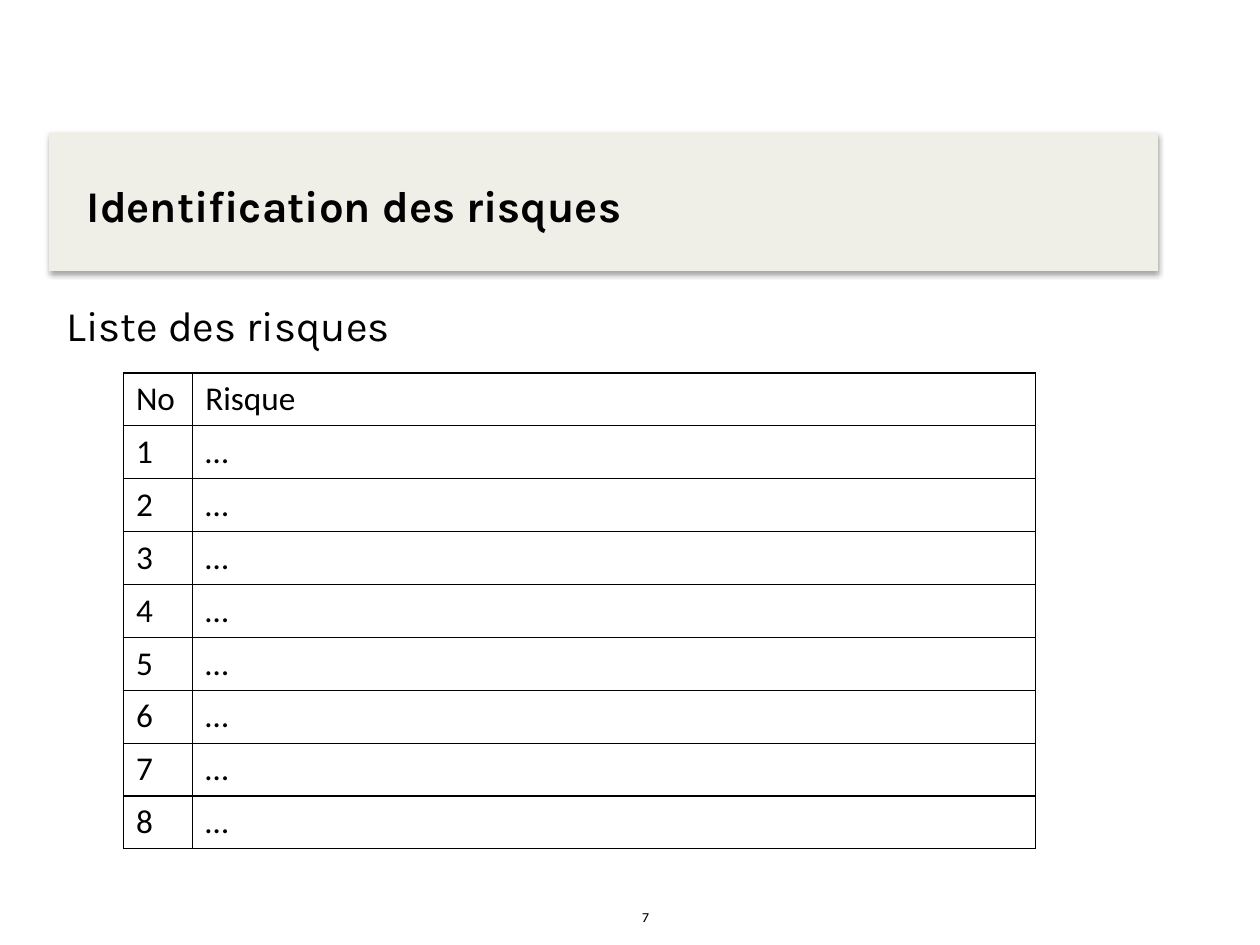
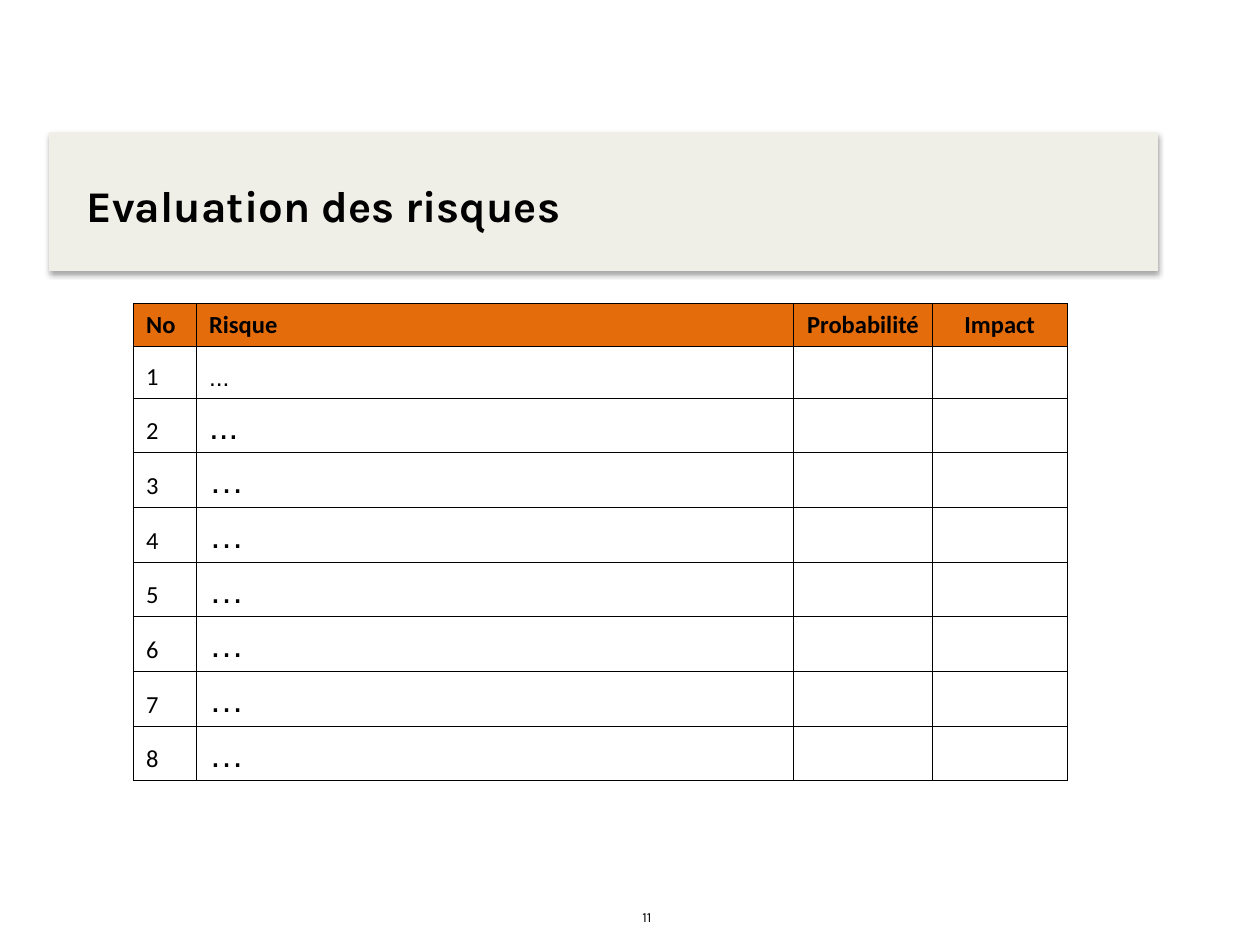
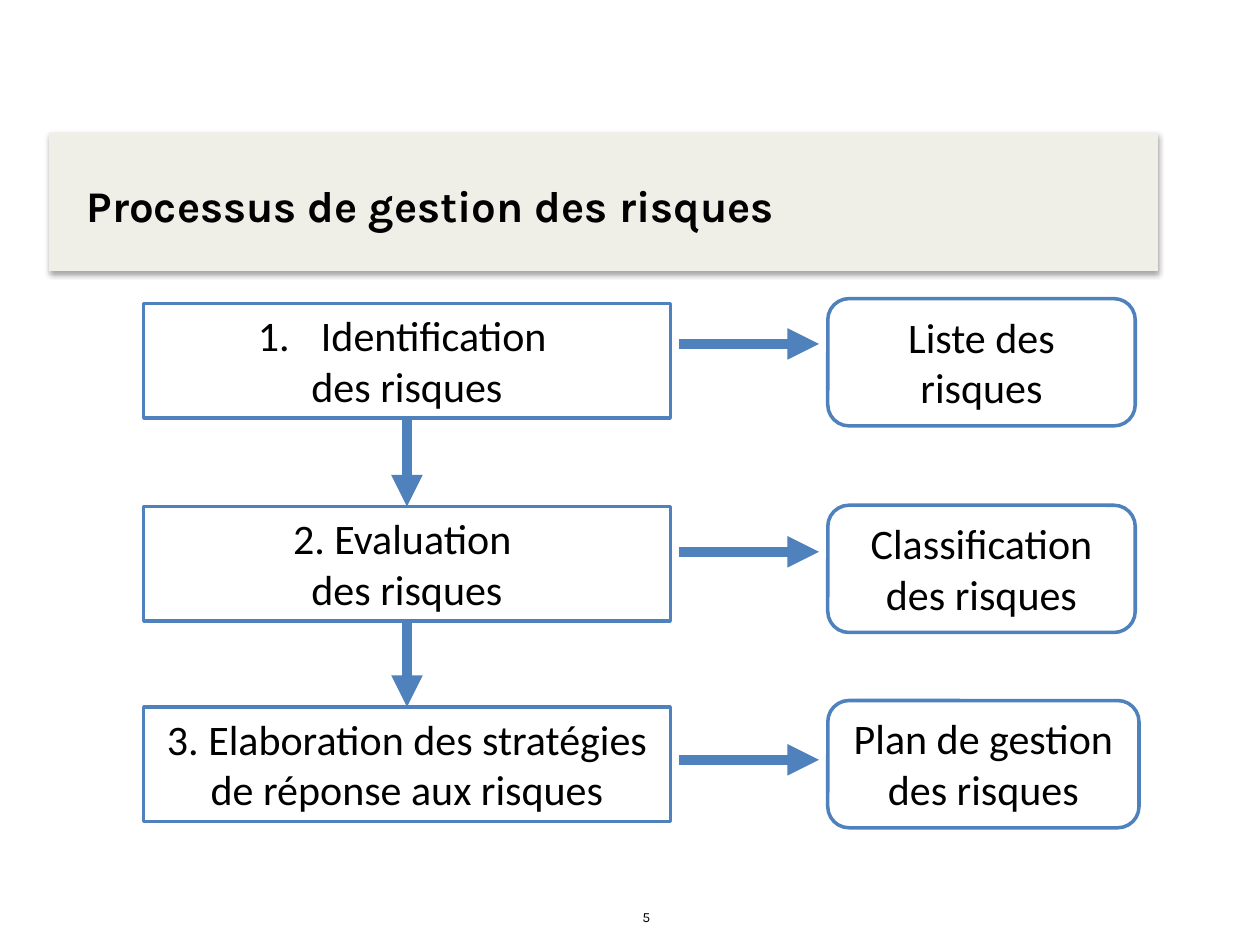
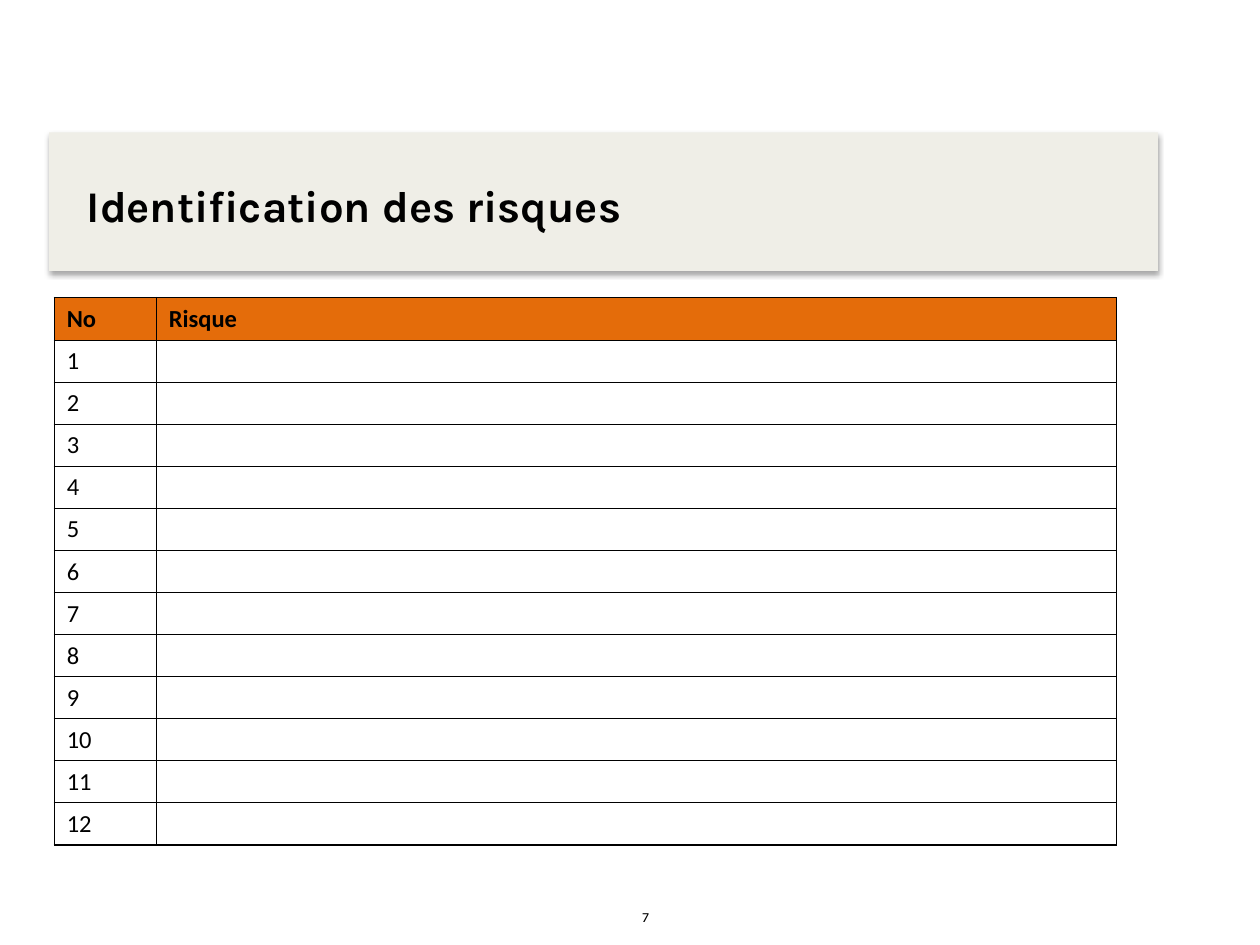
"""Build four slides on risk management: two blank risk lists, a risk rating grid and the process."""
from lxml import etree
from pptx import Presentation, util as u
from pptx.dml.color import RGBColor
from pptx.enum import shapes, text
from pptx.oxml.ns import qn

PX = u.Inches(1) // 100
BLACK = RGBColor(0x00, 0x00, 0x00)
WHITE = RGBColor(0xFF, 0xFF, 0xFF)
BAND = RGBColor(0xEF, 0xEE, 0xE7)
ORANGE = RGBColor(0xE4, 0x6C, 0x0A)
BLUE = RGBColor(0x4F, 0x81, 0xBD)
TOP, BOTTOM = 0, 2


def write(p, words, size, face="Calibri", bold=False, align=text.PP_ALIGN.LEFT):
    """Fill a paragraph and set its look."""
    p.text = words
    p.alignment = align
    p.font.size = u.Pt(size)
    p.font.name = face
    p.font.bold = bold
    p.font.color.rgb = BLACK


def add(parent, tag, **attrs):
    """Append a drawing element with its attributes."""
    return etree.SubElement(parent, qn(tag), {k: str(v) for k, v in attrs.items()})


prs = Presentation()
prs.slide_width, prs.slide_height = 1000 * PX, 750 * PX

titles = [
    ("Identification des risques", "7"),
    ("Evaluation des risques", "11"),
    ("Processus de gestion des risques", "5"),
    ("Identification des risques", "7"),
]
for title, number in titles:
    s = prs.slides.add_slide(prs.slide_layouts[6])
    band = s.shapes.add_shape(shapes.MSO_SHAPE.RECTANGLE, 39 * PX, 105 * PX, 880 * PX, 110 * PX)
    band.fill.solid()
    band.fill.fore_color.rgb = BAND
    band.line.fill.background()
    effects = add(band._element.spPr, "a:effectLst")
    shadow = add(effects, "a:outerShdw", blurRad=u.Pt(3.1), dist=u.Pt(1.8),
                 dir=90 * 60000, algn="t", rotWithShape=0)
    add(add(shadow, "a:srgbClr", val=BLACK), "a:alpha", val=35000)

    tf = s.shapes.add_textbox(59 * PX, 123 * PX, 843 * PX, 79 * PX).text_frame
    tf.word_wrap = True
    tf.vertical_anchor = text.MSO_ANCHOR.MIDDLE
    write(tf.paragraphs[0], title, 25, "Karla", bold=True)

    tf = s.shapes.add_textbox(500 * PX, 716 * PX, 327 * PX, 24 * PX).text_frame
    tf.word_wrap = True
    write(tf.paragraphs[0], number, 8, "Karla")

listing, rating, process, blank = prs.slides

tf = listing.shapes.add_textbox(43 * PX, 233 * PX, 890 * PX, 441 * PX).text_frame
tf.word_wrap = True
write(tf.paragraphs[0], "Liste des risques", 24, "Karla")

listing_rows = [["No", "Risque"]] + [[str(n), "…"] for n in range(1, 9)]
rating_rows = [["No", "Risque", "Probabilité", "Impact"]]
rating_rows += [[str(n), "..." if n < 3 else "…", "", ""] for n in range(1, 9)]
blank_rows = [["No", "Risque"]] + [[str(n), ""] for n in range(1, 13)]

tables = [
    (listing, 98, 296, [55, 669], 42, 42, 19, WHITE, listing_rows),
    (rating, 106, 241, [50, 474, 110, 107], 34, 41, 14, ORANGE, rating_rows),
    (blank, 43, 236, [81, 762], 34, 33, 14, ORANGE, blank_rows),
]
for s, left, top, widths, head_height, row_height, size, head_fill, rows in tables:
    height = head_height + row_height * (len(rows) - 1)
    table = s.shapes.add_table(len(rows), len(widths), left * PX, top * PX,
                               sum(widths) * PX, height * PX).table
    table.first_row = table.horz_banding = False
    for column, width in zip(table.columns, widths):
        column.width = width * PX
    for i, words in enumerate(rows):
        table.rows[i].height = (row_height if i else head_height) * PX
        for j, word in enumerate(words):
            cell = table.cell(i, j)
            cell.vertical_anchor = text.MSO_ANCHOR.BOTTOM
            for side in "LRTB":
                ln = add(cell._tc.get_or_add_tcPr(), "a:ln" + side, w=u.Pt(0.75))
                add(add(ln, "a:solidFill"), "a:srgbClr", val=BLACK)
            cell.fill.solid()
            cell.fill.fore_color.rgb = WHITE if i else head_fill
            dots = s is rating and i > 0 and j == 1
            write(cell.text_frame.paragraphs[0], word,
                  20 if dots and i > 1 else size,
                  "Arial" if dots else "Calibri",
                  bold=i == 0 and head_fill == ORANGE,
                  align=text.PP_ALIGN.CENTER if j > 1 else text.PP_ALIGN.LEFT)

RECT, ROUND = shapes.MSO_SHAPE.RECTANGLE, shapes.MSO_SHAPE.ROUNDED_RECTANGLE
boxes = [
    (RECT, 114, 241, 418, 91, ["Identification ", "des risques"]),
    (RECT, 114, 402, 418, 91, ["2. Evaluation ", "des risques"]),
    (RECT, 114, 561, 418, 91, ["3. Elaboration des stratégies de réponse aux risques"]),
    (ROUND, 657, 237, 244, 101, ["Liste des risques"]),
    (ROUND, 657, 401, 244, 101, ["Classification des risques"]),
    (ROUND, 657, 556, 247, 101, ["Plan de gestion des risques"]),
]
steps = []
for kind, left, top, width, height, lines in boxes:
    sp = process.shapes.add_shape(kind, left * PX, top * PX, width * PX, height * PX)
    sp.shadow.inherit = False
    sp.fill.solid()
    sp.fill.fore_color.rgb = WHITE
    sp.line.color.rgb = BLUE
    sp.line.width = u.Pt(2)
    tf = sp.text_frame
    tf.word_wrap = True
    tf.auto_size = text.MSO_AUTO_SIZE.SHAPE_TO_FIT_TEXT
    tf.vertical_anchor = text.MSO_ANCHOR.TOP
    for n, line in enumerate(lines):
        p = tf.add_paragraph() if n else tf.paragraphs[0]
        if line == "Identification ":
            pPr = p._p.get_or_add_pPr()
            pPr.set("marL", str(50 * PX))
            pPr.set("indent", str(-50 * PX))
            add(pPr, "a:buFont", typeface="+mj-lt")
            add(pPr, "a:buAutoNum", type="arabicPeriod")
        write(p, line, 24, align=text.PP_ALIGN.CENTER)
    if kind == RECT:
        steps.append(sp)

arrows = []
for upper, lower in zip(steps, steps[1:]):
    arrow = process.shapes.add_connector(shapes.MSO_CONNECTOR.STRAIGHT, 0, 0, 0, 0)
    arrow.begin_connect(upper, BOTTOM)
    arrow.end_connect(lower, TOP)
    arrows.append(arrow)
for y in range(273, 604, 165):
    arrows.append(process.shapes.add_connector(
        shapes.MSO_CONNECTOR.STRAIGHT, 539 * PX, y * PX, 650 * PX, y * PX))
for arrow in arrows:
    arrow.line.color.rgb = BLUE
    arrow.line.width = u.Pt(6)
    add(arrow.line._get_or_add_ln(), "a:tailEnd", type="triangle")
    add(arrow._element.spPr, "a:effectLst")

prs.save("out.pptx")
